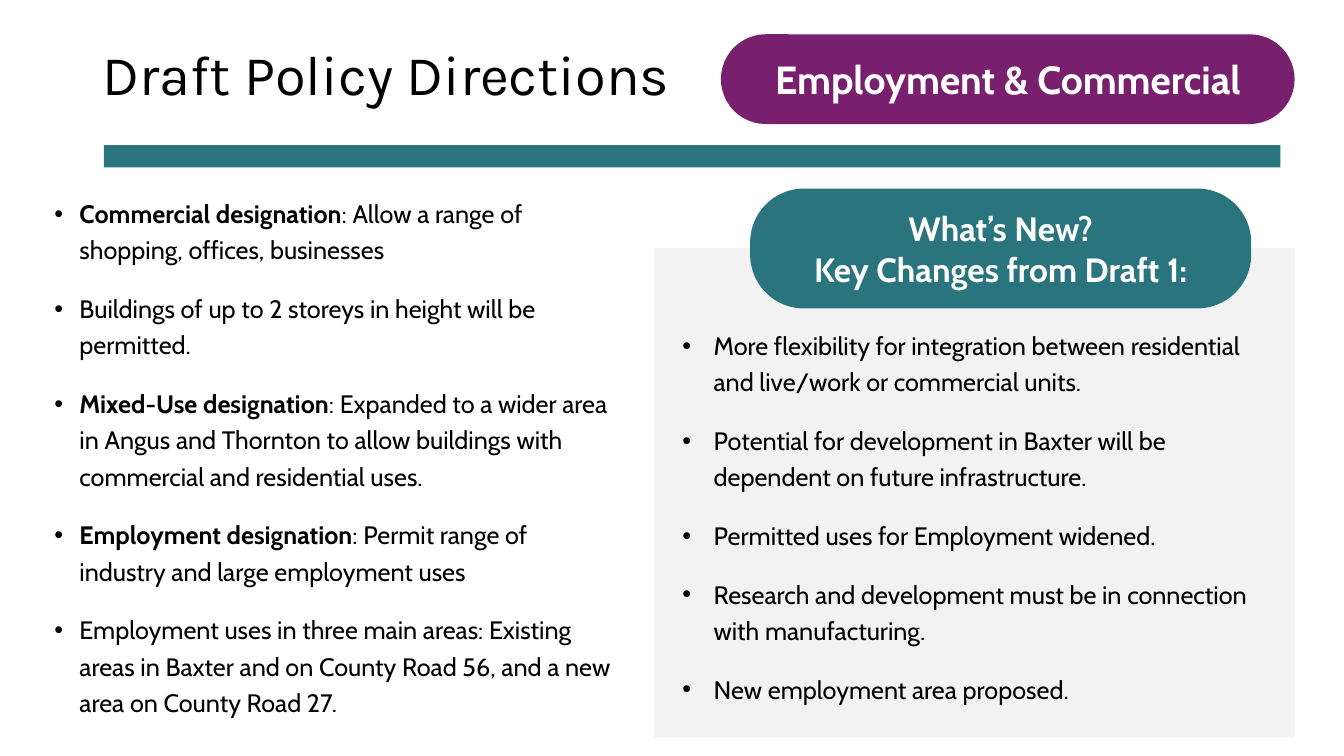
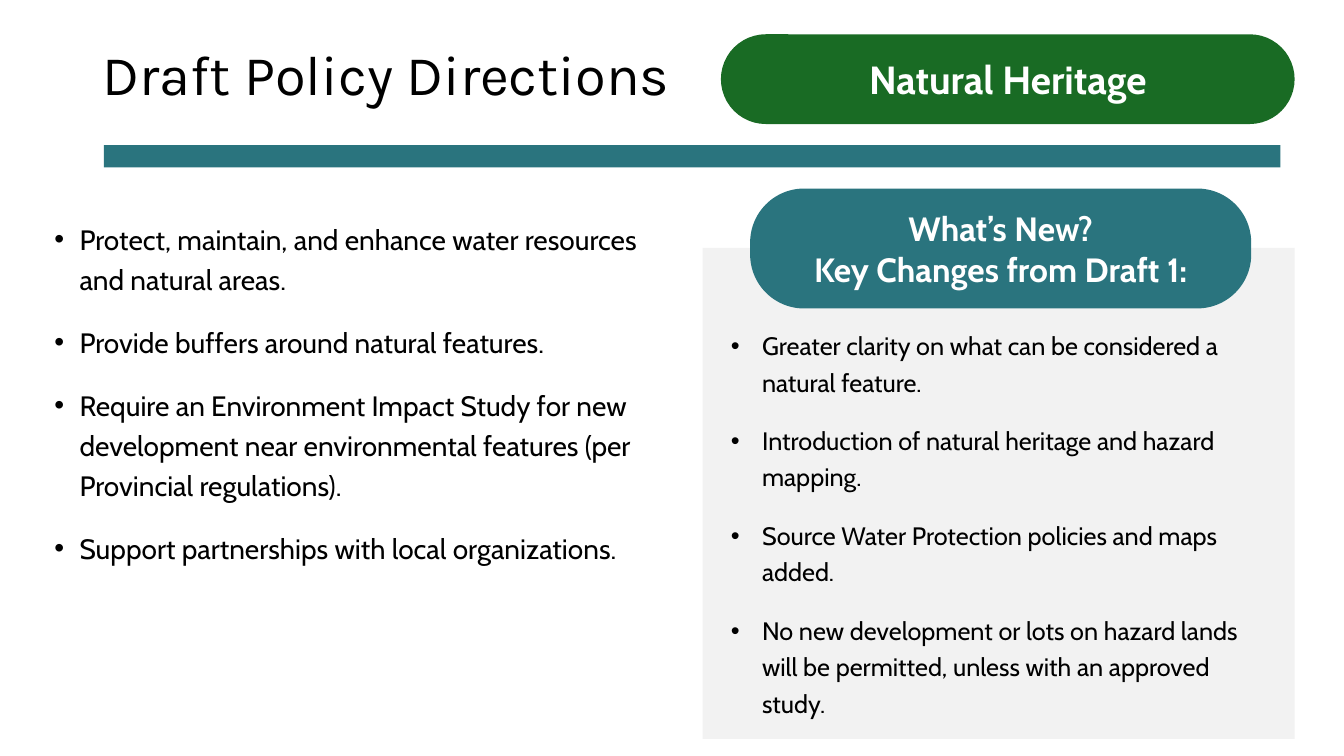
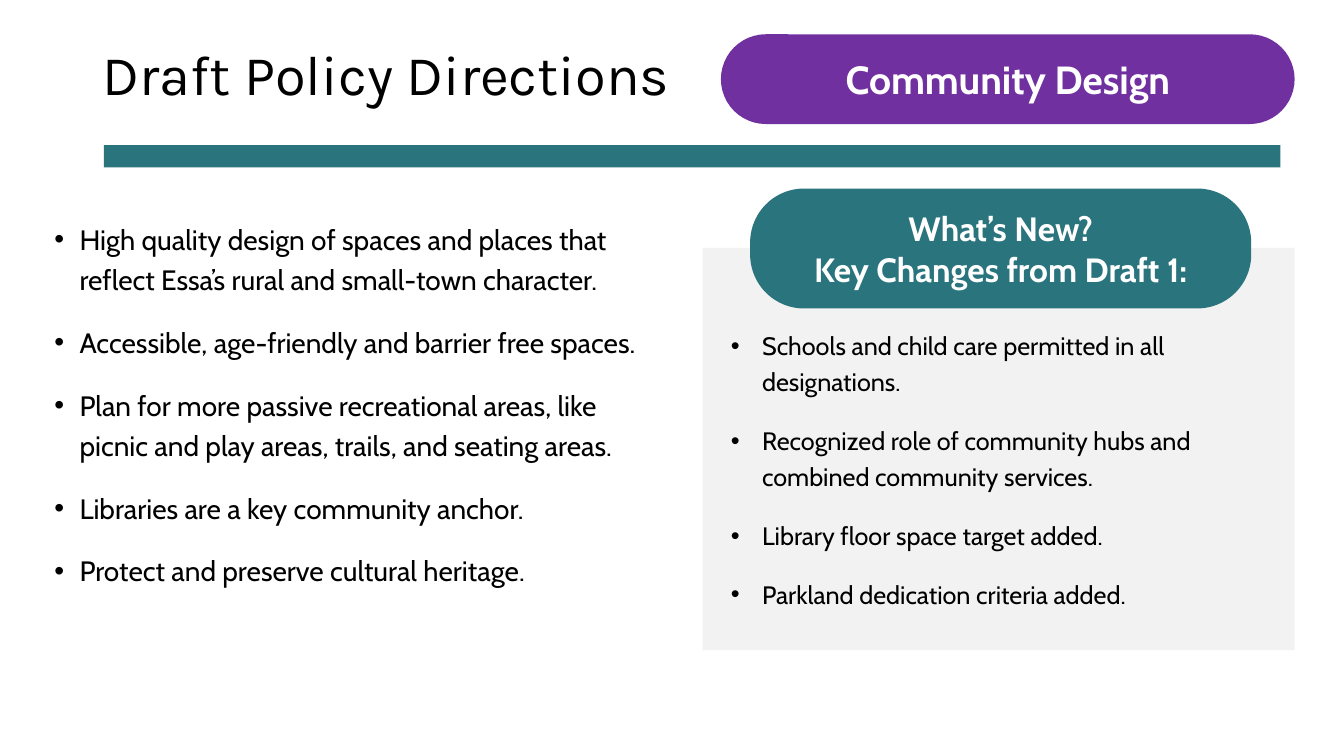
from dataclasses import dataclass

from lxml import etree
from pptx import Presentation
from pptx.dml.color import RGBColor
from pptx.enum.shapes import MSO_SHAPE
from pptx.enum.text import MSO_ANCHOR, MSO_AUTO_SIZE, PP_ALIGN
from pptx.oxml.ns import qn
from pptx.util import Inches, Pt

RECT, ROUNDED = MSO_SHAPE.RECTANGLE, MSO_SHAPE.ROUNDED_RECTANGLE
MIDDLE = MSO_ANCHOR.MIDDLE
LEFT, CENTER = PP_ALIGN.LEFT, PP_ALIGN.CENTER
FIXED, GROW = MSO_AUTO_SIZE.NONE, MSO_AUTO_SIZE.SHAPE_TO_FIT_TEXT

COLORS = {
    "text": "000000",
    "white": "FFFFFF",
    "teal": "2A747E",
    "panel": "F2F2F2",
    "plum": "78206E",
    "green": "196B24",
    "violet": "7030A0",
}
TITLE_FONT, BODY_FONT = "Karla", "Cabin"
TITLE = "Draft Policy Directions"
NEWS_HEADING = ["What’s New?", "Key Changes from Draft 1:"]
TITLE_ONLY = 5

SLIDE_W, SLIDE_H = 13.33, 7.5
RIGHT_EDGE = 12.84
PANEL_TOP = 2.46
TITLE_BOX = (0.92, 0.4, 11.5, 0.73)
BAND_BOX = (1.03, 1.44, 11.67, 0.22)
TOPIC_BOX = (7.15, 0.34, RIGHT_EDGE - 7.15, 0.89)
NEWS_HEADING_BOX = (7.44, 1.87, 4.97, 1.19)


@dataclass
class Topic:
    """One policy topic; a policy may be a (bold lead, rest) pair."""
    name: str
    color: str
    policies: list
    changes: list
    policy_box: tuple = (0.44, 2.09, 6.22, 5.24)
    policy_size: int = 20
    panel_left: float = 6.97
    panel_height: float = 4.87
    panel_margin: float = 0.28


TOPICS = [
    Topic(
        "Employment & Commercial", "plum",
        [
            ("Commercial designation", ": Allow a range of shopping, offices, businesses"),
            "Buildings of up to 2 storeys in height will be permitted.",
            ("Mixed-Use designation", ": Expanded to a wider area in Angus and Thornton "
             "to allow buildings with commercial and residential uses."),
            ("Employment designation", ": Permit range of industry and large employment uses"),
            "Employment uses in three main areas: Existing areas in Baxter and on "
            "County Road 56, and a new area on County Road 27.",
        ],
        [
            "More flexibility for integration between residential and live/work "
            "or commercial units.",
            "Potential for development in Baxter will be dependent on future infrastructure.",
            "Permitted uses for Employment widened.",
            "Research and development must be in connection with manufacturing.",
            "New employment area proposed.",
        ],
        policy_box=(0.44, 1.86, 5.74, 5.24), policy_size=18,
        panel_left=6.49, panel_height=4.86, panel_margin=0.14,
    ),
    Topic(
        "Natural Heritage", "green",
        [
            "Protect, maintain, and enhance water resources and natural areas.",
            "Provide buffers around natural features.",
            "Require an Environment Impact Study for new development near "
            "environmental features (per Provincial regulations).",
            "Support partnerships with local organizations.",
        ],
        [
            "Greater clarity on what can be considered a natural feature.",
            "Introduction of natural heritage and hazard mapping.",
            "Source Water Protection policies and maps added.",
            "No new development or lots on hazard lands will be permitted, "
            "unless with an approved study.",
        ],
    ),
    Topic(
        "Community Design", "violet",
        [
            "High quality design of spaces and places that reflect Essa’s rural "
            "and small-town character.",
            "Accessible, age-friendly and barrier free spaces.",
            "Plan for more passive recreational areas, like picnic and play areas, "
            "trails, and seating areas.",
            "Libraries are a key community anchor.",
            "Protect and preserve cultural heritage.",
        ],
        [
            "Schools and child care permitted in all designations.",
            "Recognized role of community hubs and combined community services.",
            "Library floor space target added.",
            "Parkland dedication criteria added.",
        ],
        panel_height=3.99,
    ),
]


def inches(box):
    return [Inches(length) for length in box]


def add_run(paragraph, text, size, color="text", font=BODY_FONT, bold=False):
    run = paragraph.add_run()
    run.text = text
    run.font.name = font
    run.font.size = Pt(size)
    run.font.bold = bold
    run.font.color.rgb = RGBColor.from_string(COLORS[color])


def nth_paragraph(frame, index):
    return frame.add_paragraph() if index else frame.paragraphs[0]


def add_block(slide, box, color, kind=RECT):
    block = slide.shapes.add_shape(kind, *inches(box))
    block.shadow.inherit = False
    block.fill.solid()
    block.fill.fore_color.rgb = RGBColor.from_string(COLORS[color])
    block.line.fill.background()
    return block


def add_pill(slide, box, color, lines, size, roundness):
    pill = add_block(slide, box, color, ROUNDED)
    pill.adjustments[0] = roundness
    frame = pill.text_frame
    frame.word_wrap = True
    frame.vertical_anchor = MIDDLE
    for index, line in enumerate(lines):
        paragraph = nth_paragraph(frame, index)
        paragraph.alignment = CENTER
        add_run(paragraph, line, size, "white", bold=True)


def set_bullet(paragraph, indent):
    properties = paragraph._p.get_or_add_pPr()
    properties.set("marL", str(Inches(indent)))
    properties.set("indent", str(-Inches(indent)))
    etree.SubElement(properties, qn("a:buFont")).set("typeface", "Arial")
    etree.SubElement(properties, qn("a:buChar")).set("char", "•")


def add_bullets(slide, box, items, size, indent, auto_size=FIXED):
    frame = slide.shapes.add_textbox(*inches(box)).text_frame
    frame.word_wrap = True
    frame.auto_size = auto_size
    for index, item in enumerate(items):
        paragraph = nth_paragraph(frame, index)
        set_bullet(paragraph, indent)
        paragraph.line_spacing = 1.2
        paragraph.space_before = Pt(10 if index else 0)
        paragraph.space_after = Pt(6)
        lead, rest = item if isinstance(item, tuple) else ("", item)
        if lead:
            add_run(paragraph, lead, size, bold=True)
        add_run(paragraph, rest, size)


def place_title(slide):
    title = slide.shapes.title
    title.left, title.top, title.width, title.height = inches(TITLE_BOX)
    frame = title.text_frame
    frame.auto_size = FIXED
    frame.vertical_anchor = MIDDLE
    paragraph = frame.paragraphs[0]
    paragraph.alignment = LEFT
    paragraph.line_spacing = 0.9
    add_run(paragraph, TITLE, 40, font=TITLE_FONT)


def add_header(slide, topic):
    place_title(slide)
    add_block(slide, BAND_BOX, "teal")
    add_pill(slide, TOPIC_BOX, topic.color, [topic.name], 28, 0.5)


def add_changes(slide, box, changes, right_margin):
    """Grey panel with its heading pill and the list of changes inside."""
    left, top, width, height = box
    inset, head = 0.18, 0.71
    add_block(slide, box, "panel")
    add_pill(slide, NEWS_HEADING_BOX, "teal", NEWS_HEADING, 24, 0.45)
    list_box = (left + inset, top + head, width - inset - right_margin, height - head - 0.25)
    add_bullets(slide, list_box, changes, 18, 0.31, GROW)


def add_topic_slide(deck, topic):
    slide = deck.slides.add_slide(deck.slide_layouts[TITLE_ONLY])
    add_header(slide, topic)
    panel_box = (topic.panel_left, PANEL_TOP, RIGHT_EDGE - topic.panel_left, topic.panel_height)
    add_changes(slide, panel_box, topic.changes, topic.panel_margin)
    add_bullets(slide, topic.policy_box, topic.policies, topic.policy_size, 0.25)


def main():
    deck = Presentation()
    deck.slide_width, deck.slide_height = Inches(SLIDE_W), Inches(SLIDE_H)
    for topic in TOPICS:
        add_topic_slide(deck, topic)
    deck.save("out.pptx")


if __name__ == "__main__":
    main()
